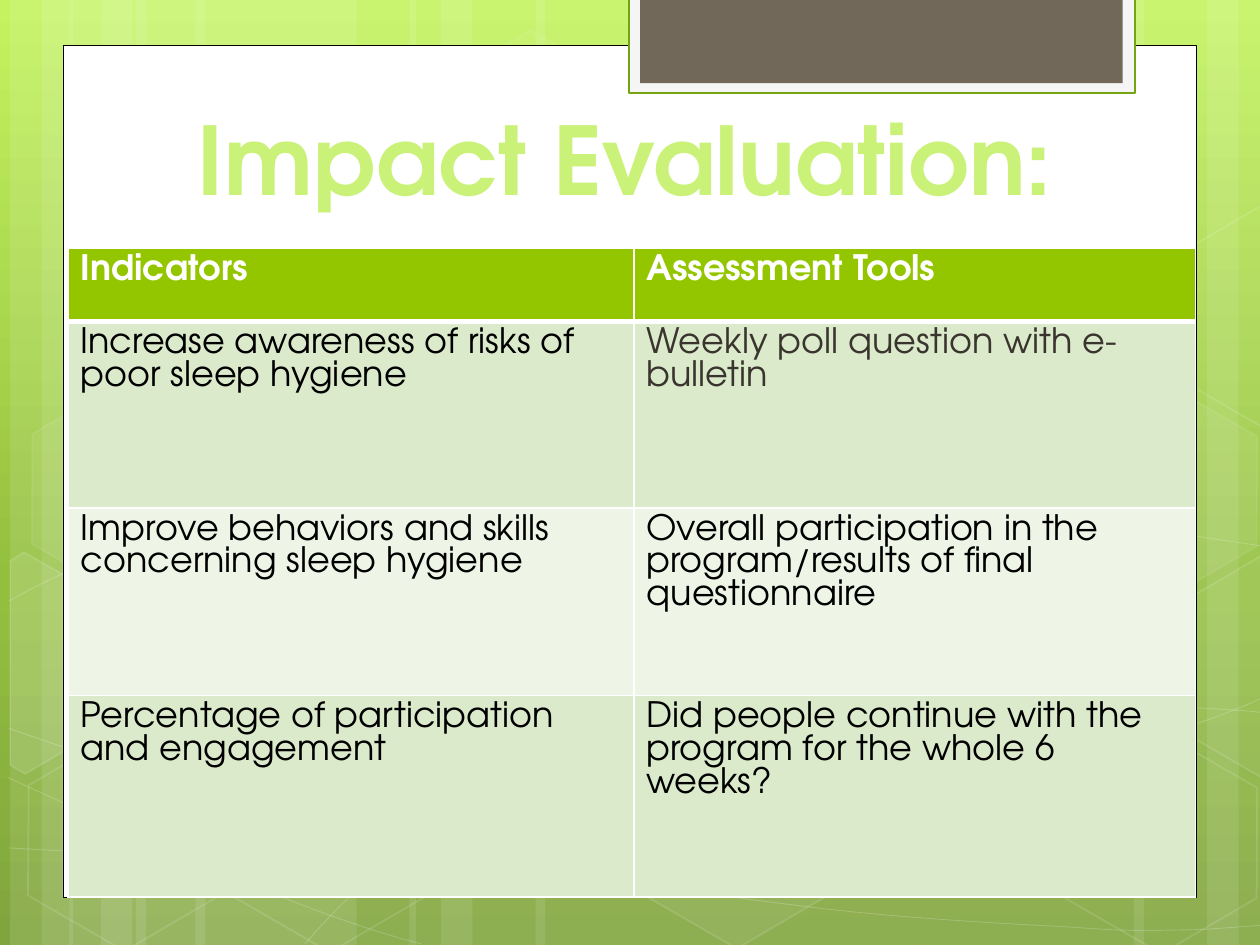
import copy
import math

import pptx
import pptx.dml.color
import pptx.enum.shapes
import pptx.enum.text
import pptx.oxml
import pptx.oxml.ns
import pptx.util

Inches = pptx.util.Inches
Pt = pptx.util.Pt
RGBColor = pptx.dml.color.RGBColor
SHAPE = pptx.enum.shapes.MSO_SHAPE
qn = pptx.oxml.ns.qn

WHITE = RGBColor(0xFF, 0xFF, 0xFF)
BLACK = RGBColor(0x00, 0x00, 0x00)
LIME = RGBColor(0xC3, 0xF3, 0x5F)
GREEN = RGBColor(0x93, 0xBF, 0x3F)
MOSS = RGBColor(0x81, 0xA5, 0x3E)
TAB_FRAME = RGBColor(0xF5, 0xF5, 0xF5)
TAB_LINE = RGBColor(0x74, 0xA5, 0x10)
TAB_FILL = RGBColor(0x71, 0x68, 0x5A)
TITLE_COLOR = RGBColor(0xCA, 0xF2, 0x78)
HEADER_FILL = RGBColor(0x94, 0xC6, 0x00)
BAND_DARK = RGBColor(0xDC, 0xEA, 0xCC)
BAND_LIGHT = RGBColor(0xEE, 0xF5, 0xE7)
SOFT_BLACK = RGBColor(0x39, 0x34, 0x2D)
FONT = "TeX Gyre Adventor"

STRIPES = [
    (1.08, 1.75, 0), (0.08, 0.5, 0), (0.33, 0.83, 0), (1.55, 1.75, 0), (0.55, 0.5, 0),
    (0.8, 0.83, 0), (7.33, 1.75, 180), (9.58, 0.5, 180), (9, 0.83, 180), (4.25, 3.08, 0),
    (3.25, 0.5, 0), (3.5, 0.83, 0),
]
CURVES = [
    [(0.07, 6.73), (0.61, 6.76), (1.15, 6.79), (1.9, 6.78), (2.65, 6.77), (3.58, 6.75),
     (4.58, 6.65), (5.58, 6.55), (7, 6.36), (7.92, 6.17), (8.83, 5.98), (9.77, 5.68),
     (10.07, 5.51)],
    [(0.07, 4.77), (0.36, 4.61), (0.65, 4.46), (1.21, 4.31), (1.78, 4.16), (2.59, 3.94),
     (3.47, 3.87), (4.36, 3.8), (5.44, 3.79), (6.54, 3.87), (7.64, 3.95), (9.47, 4.26),
     (10.07, 4.34)],
    [(0.06, 6.17), (1.27, 6.72), (2.47, 7.27), (3.34, 7.49)],
    [(0.07, 5.78), (0.38, 5.89), (0.7, 6), (1.28, 6.16), (1.86, 6.31), (2.73, 6.56),
     (3.57, 6.73), (4.4, 6.9), (5.45, 7.08), (6.28, 7.18), (7.11, 7.29), (8, 7.33),
     (8.53, 7.36), (9.05, 7.4), (9.19, 7.38), (9.45, 7.38), (9.71, 7.37), (9.89, 7.35),
     (10.07, 7.34)],
    [(2.42, 7.49), (2.6, 7.29), (2.78, 7.09), (3.02, 6.91), (3.26, 6.73), (3.6, 6.53),
     (3.88, 6.39), (4.16, 6.25), (4.33, 6.19), (4.7, 6.09), (5.06, 5.99), (5.73, 5.85),
     (6.08, 5.78), (6.44, 5.71), (6.49, 5.71), (6.8, 5.69), (7.11, 5.66), (7.6, 5.63),
     (7.94, 5.62), (8.29, 5.61), (8.86, 5.62), (8.86, 5.62), (8.86, 5.62), (9.53, 5.62),
     (9.53, 5.62), (9.71, 5.63), (9.88, 5.64), (9.97, 5.65), (10.06, 5.66), (10.03, 5.65),
     (10.06, 5.66)],
]
HEXAGONS = [
    (3.34, 0.36, 4, 8), (4.97, 5.89, 6, 12), (0.11, 5.91, 0, 12), (0.14, 3.12, 7, 8),
    (1.74, 5.92, 0, 12), (7.53, 4.53, 10, 12), (8.34, 5.93, 0, 12), (8.34, 3.14, 7, 8),
]
CUT_HEXAGONS = [
    ((0.36, 5.35), 10,
     [(0.08, 4.45), (0.19, 4.38), (0.96, 4.82), (0.95, 5.7), (0.2, 6.14), (0.08, 6.07)]),
    ((9.85, 5.2), 4,
     [(9.26, 4.85), (10.01, 4.41), (10.09, 4.46), (10.09, 6.13), (10.02, 6.17), (9.26, 5.73)]),
    ((9.85, 2.41), 0,
     [(9.26, 2.07), (10.01, 1.63), (10.1, 1.68), (10.09, 3.35), (10.02, 3.39), (9.26, 2.95)]),
]
ROWS = [
    ("Indicators", "Assessment Tools"),
    ("Increase awareness of risks of poor sleep hygiene", "Weekly poll question with e-bulletin"),
    ("Improve behaviors and skills concerning sleep hygiene",
     "Overall participation in the program/results of final questionnaire"),
    ("Percentage of participation and engagement",
     "Did people continue with the program for the whole 6 weeks?"),
]


def set_alpha(element, percent):
    """Give every colour below an element the same opacity."""
    for color in element.iter(qn("a:srgbClr")):
        color.append(color.makeelement(qn("a:alpha"), {"val": str(percent * 1000)}))


def paint(shape, fill=None, line=None, width=1, fill_alpha=100, line_alpha=100):
    """Set the fill and outline of a shape, with opacities in percent."""
    shape.shadow.inherit = False
    properties = shape._element.spPr
    if fill is None or fill_alpha == 0:
        shape.fill.background()
    else:
        shape.fill.solid()
        shape.fill.fore_color.rgb = fill
        if fill_alpha < 100:
            set_alpha(properties.find(qn("a:solidFill")), fill_alpha)
    if line is None:
        shape.line.fill.background()
    else:
        shape.line.color.rgb = line
        shape.line.width = Pt(width)
        if line_alpha < 100:
            set_alpha(properties.find(qn("a:ln")), line_alpha)


def add_block(page, kind, left, top, width, height):
    """Add a preset shape measured in inches."""
    return page.shapes.add_shape(kind, Inches(left), Inches(top), Inches(width), Inches(height))


def add_outline(page, left, top, points, close):
    """Add a freeform through points offset from a corner."""
    scaled = [(Inches(left + x), Inches(top + y)) for x, y in points]
    builder = page.shapes.build_freeform(*scaled[0], scale=1.0)
    builder.add_line_segments(scaled[1:], close=close)
    return builder.convert_to_shape()


def add_curve(page, left, top, knots):
    """Add a chain of cubic Bezier segments, three points for each."""
    curve = add_outline(page, left, top, knots, False)
    lines = list(curve._element.iter(qn("a:lnTo")))
    for start in range(0, len(lines), 3):
        segment = lines[start].makeelement(qn("a:cubicBezTo"), {})
        lines[start].addprevious(segment)
        for line in lines[start:start + 3]:
            segment.append(line[0])
            line.getparent().remove(line)
    return curve


def turn_points(points, center, degrees):
    """Rotate points clockwise about a center."""
    cosine, sine = math.cos(math.radians(degrees)), math.sin(math.radians(degrees))
    middle_x, middle_y = center
    return [(middle_x + (x - middle_x) * cosine - (y - middle_y) * sine,
             middle_y + (x - middle_x) * sine + (y - middle_y) * cosine) for x, y in points]


def add_backdrop(page, box):
    """Draw the gradient, stripes, curves and hexagons behind the card."""
    left, top, _, height = box
    fill = page.background.fill
    fill.gradient()
    fill.gradient_angle = 270
    stop_list = page._element.find(".//" + qn("a:gsLst"))
    stop_list.insert(1, copy.deepcopy(stop_list[0]))
    for stop, (position, color) in zip(fill.gradient_stops, [(0, LIME), (0.62, GREEN), (1, MOSS)]):
        stop.position = position
        stop.color.rgb = color
    for x, width, turn in STRIPES:
        stripe = add_block(page, SHAPE.RECTANGLE, left + x, top, width, height)
        stripe.rotation = turn
        paint(stripe, WHITE, fill_alpha=10)
    for knots in CURVES:
        paint(add_curve(page, left, top, knots), line=WHITE, width=0.5, line_alpha=20)
    for x, y, fill_alpha, line_alpha in HEXAGONS:
        hexagon = add_block(page, SHAPE.HEXAGON, left + x, top + y, 1.75, 1.52)
        hexagon.adjustments[0] = 0.285
        hexagon.rotation = 30
        paint(hexagon, WHITE, WHITE, 1, fill_alpha, line_alpha)
    for center, fill_alpha, points in CUT_HEXAGONS:
        hexagon = add_outline(page, left, top, turn_points(points, center, -30), True)
        hexagon.rotation = 30
        paint(hexagon, WHITE, WHITE, 1, fill_alpha, 12)


def add_card(page, box):
    """Draw the white card with the tab hanging over its top edge."""
    left, top, width, height = box
    paint(add_block(page, SHAPE.RECTANGLE, left, top, width, height), WHITE, BLACK, 0.5)
    paint(add_block(page, SHAPE.RECTANGLE, left + 4.49, top - 0.38, 4.02, 0.76),
          TAB_FRAME, TAB_LINE, 1.25)
    paint(add_block(page, SHAPE.RECTANGLE, left + 4.58, top - 0.38, 3.83, 0.68), TAB_FILL)


def style_font(font, size, color, bold):
    """Set the typeface, size, colour and weight of a font."""
    font.name = FONT
    font.size = Pt(size)
    font.color.rgb = color
    font.bold = bold


def add_title(page, box):
    """Write the slide title at the bottom of its box."""
    frame = page.shapes.add_textbox(*map(Inches, box)).text_frame
    frame.word_wrap = True
    frame.vertical_anchor = pptx.enum.text.MSO_ANCHOR.BOTTOM
    para = frame.paragraphs[0]
    para.text = "Impact Evaluation:"
    style_font(para.font, 54, TITLE_COLOR, True)


def add_borders(cell, widths):
    """Draw white borders of the given point widths on a cell."""
    properties = cell._tc.get_or_add_tcPr()
    for index, (side, width) in enumerate(widths.items()):
        properties.insert(index, pptx.oxml.parse_xml(
            f'<a:{side} xmlns:a="http://schemas.openxmlformats.org/drawingml/2006/main" '
            f'w="{Pt(width)}"><a:solidFill><a:srgbClr val="{WHITE}"/></a:solidFill></a:{side}>'))


def add_indicator_table(page, box):
    """Build the table of indicators and assessment tools."""
    table = page.shapes.add_table(len(ROWS), 2, *map(Inches, box)).table
    for column, width in zip(table.columns, (4.49, 4.46)):
        column.width = Inches(width)
    for row, height in zip(table.rows, (0.58, 1.48, 1.49, 1.6)):
        row.height = Inches(height)
    fills = (HEADER_FILL, BAND_DARK, BAND_LIGHT, BAND_DARK)
    for row_index, texts in enumerate(ROWS):
        for column_index, text in enumerate(texts):
            cell = table.cell(row_index, column_index)
            cell.fill.solid()
            cell.fill.fore_color.rgb = fills[row_index]
            para = cell.text_frame.paragraphs[0]
            para.text = text
            para.line_spacing = Pt(18.7)
            color = SOFT_BLACK if (row_index, column_index) == (1, 1) else BLACK
            style_font(para.font, 20, color if row_index else WHITE, row_index == 0)
            add_borders(cell, {"lnL": 1, "lnR": 1, "lnT": 3 if row_index == 1 else 1,
                               "lnB": 3 if row_index == 0 else 1})


def main():
    """Build the slide and save the deck."""
    deck = pptx.Presentation()
    deck.slide_width, deck.slide_height = Inches(10), Inches(7.5)
    page = deck.slides.add_slide(deck.slide_layouts[6])
    add_backdrop(page, (0, 0, 10, 7.5))
    add_card(page, (0.5, 0.36, 9, 6.76))
    add_title(page, (1.47, 0.5, 7.68, 1.25))
    add_indicator_table(page, (0.54, 1.97, 8.96, 5.15))
    deck.save("out.pptx")


if __name__ == "__main__":
    main()
